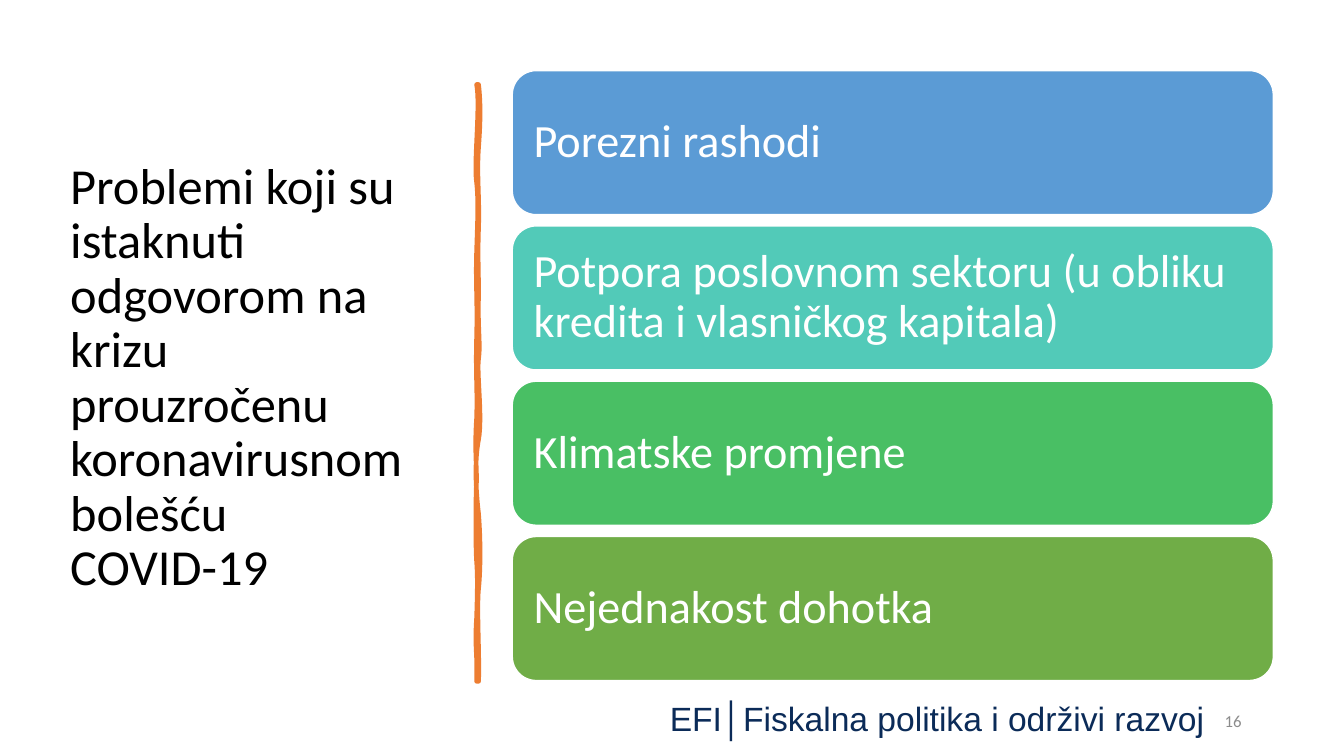
from lxml import etree
from pptx import Presentation
from pptx import util as u
from pptx.dml.color import RGBColor
from pptx.enum import shapes, text
from pptx.oxml.ns import qn

COLORS = {
    "title": "000000",
    "brush": "ED7D31",
    "white": "FFFFFF",
    "footer": "0B2B58",
    "number": "8C8C8C",
}
CARDS = [
    ("Porezni rashodi", "5B9BD5"),
    ("Potpora poslovnom sektoru (u obliku kredita i vlasničkog kapitala)", "52CAB8"),
    ("Klimatske promjene", "49BF64"),
    ("Nejednakost dohotka", "70AD47"),
]
TITLE = "Problemi koji su istaknuti odgovorom na krizu prouzročenu koronavirusnom bolešću COVID-19"

# Two control points and an end point per curve, in hundredths of an inch
# from the top left of the brush stroke: down the right edge, up the left.
BRUSH_START = (2, 0)
BRUSH_CURVES = [
    (4, 18, 4, 35, 2, 62), (0, 89, 3, 111, 2, 142),
    (1, 173, 2, 178, 2, 210), (1, 241, 4, 258, 2, 272),
    (0, 286, 6, 330, 2, 352), (-2, 373, -1, 400, 2, 426),
    (4, 452, 4, 480, 2, 500), (0, 519, 3, 566, 2, 592),
    (1, 592, 0, 592, 0, 592), (1, 562, -2, 560, 0, 529),
    (1, 499, 1, 486, 0, 473), (-1, 460, -1, 411, 0, 393),
    (0, 375, -2, 361, 0, 331), (1, 302, -1, 289, 0, 251),
    (1, 214, -1, 197, 0, 166), (1, 134, 2, 116, 0, 97),
    (-3, 79, 4, 20, 0, 0), (1, 0, 1, 0, 2, 0),
]


def color(value):
    return RGBColor.from_string(COLORS.get(value, value))


def write(shape, wording, size, font_name, font_color,
          align=text.PP_ALIGN.LEFT, anchor=text.MSO_ANCHOR.MIDDLE,
          spacing=0.9, margins=(0.25, 0.13, 0.25, 0.13)):
    """Fill a shape with one paragraph; margins are left, top, right, bottom in cm."""
    frame = shape.text_frame
    frame.word_wrap = True
    frame.auto_size = text.MSO_AUTO_SIZE.NONE
    frame.vertical_anchor = anchor
    (frame.margin_left, frame.margin_top,
     frame.margin_right, frame.margin_bottom) = map(u.Cm, margins)
    paragraph = frame.paragraphs[0]
    paragraph.alignment = align
    paragraph.line_spacing = spacing
    run = paragraph.add_run()
    run.text = wording
    run.font.size = u.Pt(size)
    run.font.name = font_name
    run.font.color.rgb = color(font_color)


def add_title(slide, left, top, width, height):
    title = slide.shapes.title
    title.left, title.top, title.width, title.height = left, top, width, height
    write(title, TITLE, 36, "Calibri", "title", margins=(0.25, 0.13, 0.5, 0.13))


def bend_segments(freeform):
    """Turn every three straight segments into one cubic curve."""
    segments = list(freeform._element.iter(qn("a:lnTo")))
    for first in range(0, len(segments), 3):
        curve = etree.Element(qn("a:cubicBezTo"))
        segments[first].addprevious(curve)
        for segment in segments[first:first + 3]:
            curve.append(segment[0])
            segment.getparent().remove(segment)


def add_brush_stroke(slide, left, top, height):
    unit = height / max(curve[5] for curve in BRUSH_CURVES)
    points = [(left + curve[i] * unit, top + curve[i + 1] * unit)
              for curve in BRUSH_CURVES for i in (0, 2, 4)]
    builder = slide.shapes.build_freeform(left + BRUSH_START[0] * unit, top)
    builder.add_line_segments(points, close=True)
    brush = builder.convert_to_shape()
    bend_segments(brush)
    brush.shadow.inherit = False
    brush.fill.solid()
    brush.fill.fore_color.rgb = color("brush")
    brush.line.color.rgb = color("brush")
    brush.line.width = u.Pt(3.25)
    etree.SubElement(brush._element.spPr.find(qn("a:ln")), qn("a:round"))


def add_cards(slide, left, top, width, height):
    card_height = u.Cm(3.63)
    pitch = (height - card_height) / (len(CARDS) - 1)
    for index, (wording, fill) in enumerate(CARDS):
        card = slide.shapes.add_shape(
            shapes.MSO_SHAPE.ROUNDED_RECTANGLE,
            left, round(top + index * pitch), width, card_height)
        card.shadow.inherit = False
        card.fill.solid()
        card.fill.fore_color.rgb = color(fill)
        card.line.color.rgb = color("white")
        card.line.width = u.Pt(1)
        write(card, wording, 33, "Calibri", "white", margins=(0.36,) * 4)


def add_footer(slide, left, top, width, height):
    footer = slide.shapes.add_textbox(left, top, width, height)
    write(footer, "EFI│Fiskalna politika i održivi razvoj", 24, "Arial", "footer",
          text.PP_ALIGN.RIGHT, text.MSO_ANCHOR.TOP, 0.7, (0.15,) * 4)


def add_page_number(slide, left, top, width, height):
    number = slide.shapes.add_textbox(left, top, width, height)
    write(number, "16", 12, "Calibri", "number", text.PP_ALIGN.RIGHT, spacing=1.0)


def main():
    presentation = Presentation()
    presentation.slide_width = u.Cm(33.87)
    presentation.slide_height = u.Cm(19.05)
    slide = presentation.slides.add_slide(presentation.slide_layouts[5])
    add_title(slide, u.Cm(1.52), u.Cm(1.78), u.Cm(9.75), u.Cm(15.52))
    add_brush_stroke(slide, u.Cm(12.01), u.Cm(2.13), u.Cm(15.04))
    add_cards(slide, u.Cm(12.91), u.Cm(1.78), u.Cm(19.18), u.Cm(15.37))
    add_footer(slide, u.Cm(11.27), u.Cm(17.71), u.Cm(19.23), u.Cm(1.04))
    add_page_number(slide, u.Cm(23.92), u.Cm(17.65), u.Cm(7.62), u.Cm(1.02))
    presentation.save("out.pptx")


if __name__ == "__main__":
    main()
